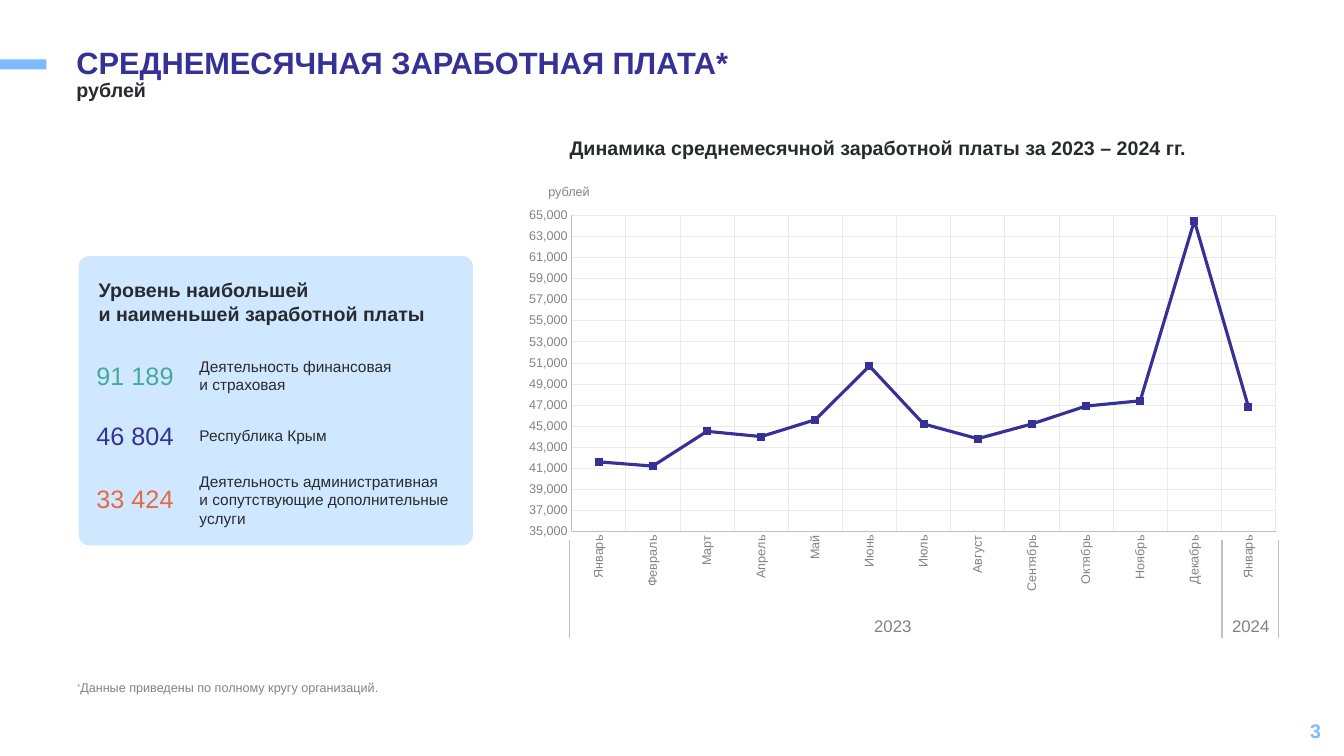
from dataclasses import dataclass

from lxml import etree
from pptx import Presentation
from pptx.chart.axis import CategoryAxis, ValueAxis
from pptx.chart.data import CategoryChartData
from pptx.dml.color import RGBColor
from pptx.enum.chart import XL_CHART_TYPE, XL_TICK_MARK
from pptx.enum.shapes import MSO_CONNECTOR, MSO_SHAPE
from pptx.enum.text import MSO_ANCHOR, PP_ALIGN
from pptx.oxml import parse_xml
from pptx.oxml.ns import nsdecls, qn
from pptx.slide import Slide
from pptx.util import Inches, Pt

LINE_CHART = XL_CHART_TYPE.LINE
NO_TICK = XL_TICK_MARK.NONE
STRAIGHT = MSO_CONNECTOR.STRAIGHT
RECTANGLE, ROUNDED = MSO_SHAPE.RECTANGLE, MSO_SHAPE.ROUNDED_RECTANGLE
TOP, MIDDLE = MSO_ANCHOR.TOP, MSO_ANCHOR.MIDDLE
LEFT, CENTER, RIGHT = PP_ALIGN.LEFT, PP_ALIGN.CENTER, PP_ALIGN.RIGHT

FONT = "Arial"
COLORS = {
    "accent": "7DBBFC", "indigo": "363194", "dark": "282A2E", "gray": "838383",
    "panel": "CFE8FF", "green": "46AA98", "orange": "E36846",
    "axis": "BFBFBF", "grid": "EBEBEB",
}
MONTHS = ["Январь", "Февраль", "Март", "Апрель", "Май", "Июнь", "Июль", "Август",
          "Сентябрь", "Октябрь", "Ноябрь", "Декабрь", "Январь"]
WAGES = [41600, 41200, 44500, 44000, 45600, 50700, 45200, 43800,
         45200, 46900, 47400, 64500, 46800]
PLOT_AREA = {"x": 0.091, "y": 0.044, "w": 0.884, "h": 0.774}


@dataclass
class Label:
    left: float
    top: float
    width: float
    height: float
    lines: list[str]
    size: float
    color: str
    bold: bool = False
    align: PP_ALIGN = LEFT
    anchor: MSO_ANCHOR = TOP
    line_spacing: float = 1.0
    wrap: bool = True
    margin: float | None = None
    superscript: str = ""


@dataclass
class WageLevel:
    amount: str
    color: str
    amount_top: float
    activity: list[str]
    activity_top: float
    activity_width: float


LABELS = [
    Label(10.2, 7.05, 3, 0.4, ["3"], 14, "accent", True, RIGHT, MIDDLE),
    Label(0.66, 0.43, 10.41, 0.57, ["СРЕДНЕМЕСЯЧНАЯ ЗАРАБОТНАЯ ПЛАТА*"], 22, "indigo",
          True, line_spacing=0.9),
    Label(0.66, 0.75, 10.41, 0.44, ["рублей"], 14, "dark", True, line_spacing=0.9),
    Label(5.55, 1.3, 6.82, 0.37,
          ["Динамика среднемесячной заработной платы за 2023 – 2024 гг."], 14, "dark", True),
    Label(5.34, 1.77, 1.04, 0.25, ["рублей"], 9, "gray"),
    Label(0.67, 6.7, 3.86, 0.33, ["Данные приведены по полному кругу организаций."], 9, "gray",
          superscript="*"),
    Label(7.63, 6.1, 2.45, 0.22, ["2023"], 12, "gray", align=CENTER, margin=0.01),
    Label(11.93, 6.1, 0.95, 0.22, ["2024"], 12, "gray", align=CENTER, margin=0.01),
    Label(0.88, 2.71, 3.64, 0.57, ["Уровень наибольшей", "и наименьшей заработной платы"],
          14, "dark", True),
]
WAGE_LEVELS = [
    WageLevel("91 189", "green", 3.53, ["Деятельность финансовая", "и страховая"], 3.49, 2.39),
    WageLevel("46 804", "indigo", 4.12, ["Республика Крым"], 4.18, 2.39),
    WageLevel("33 424", "orange", 4.75,
              ["Деятельность административная", "и сопутствующие дополнительные услуги"],
              4.63, 2.95),
]


def color(name: str) -> RGBColor:
    return RGBColor.from_string(COLORS[name])


def add_label(page: Slide, label: Label) -> None:
    box = page.shapes.add_textbox(*map(Inches, (label.left, label.top, label.width, label.height)))
    frame = box.text_frame
    frame.word_wrap = label.wrap
    frame.vertical_anchor = label.anchor
    if label.margin is not None:
        for side in ("left", "top", "right", "bottom"):
            setattr(frame, f"margin_{side}", Inches(label.margin))
    font_format = {"name": FONT, "size": Pt(label.size), "bold": label.bold}
    for index, line in enumerate(label.lines):
        para = frame.add_paragraph() if index else frame.paragraphs[0]
        para.alignment = label.align
        para.line_spacing = label.line_spacing
        if label.superscript:
            mark = para.add_run()
            mark.text = label.superscript
            mark.font._element.set("baseline", "30000")
        para.add_run().text = line
        for span in para.runs:
            for attribute, value in font_format.items():
                setattr(span.font, attribute, value)
            span.font.color.rgb = color(label.color)


def add_block(page: Slide, kind: MSO_SHAPE, place: tuple[float, ...], fill: str,
              corner: float | None = None) -> None:
    block = page.shapes.add_shape(kind, *map(Inches, place))
    block.shadow.inherit = False
    block.fill.solid()
    block.fill.fore_color.rgb = color(fill)
    block.line.fill.background()
    if corner is not None:
        block.adjustments[0] = corner


def add_year_divider(page: Slide, x: float) -> None:
    divider = page.shapes.add_connector(STRAIGHT, Inches(x), Inches(5.36), Inches(x), Inches(6.33))
    divider.line.color.rgb = color("axis")
    divider.line.width = Pt(1)
    etree.SubElement(divider._element.spPr, qn("a:effectLst"))


def style_axis(axis: CategoryAxis | ValueAxis) -> None:
    axis.major_tick_mark = axis.minor_tick_mark = NO_TICK
    axis.has_major_gridlines = True
    for line, name, width in ((axis.format.line, "axis", 1),
                              (axis.major_gridlines.format.line, "grid", 0.5)):
        line.color.rgb = color(name)
        line.width = Pt(width)
    font = axis.tick_labels.font
    font.name, font.size = FONT, Pt(9)
    font.color.rgb = color("gray")


def add_wage_chart(page: Slide) -> None:
    wages = CategoryChartData(number_format="#,##0")
    wages.categories = MONTHS
    wages.add_series("Зарплата", WAGES)
    place = map(Inches, (4.95, 1.96, 7.9, 4.05))
    chart = page.shapes.add_chart(LINE_CHART, *place, wages).chart
    chart.has_legend = chart.has_title = False
    chart.font.name, chart.font.size = FONT, Pt(9)
    chart.font.color.rgb = color("dark")

    months, values = chart.category_axis, chart.value_axis
    style_axis(months)
    style_axis(values)
    months.tick_labels.font._element.getroottree()
    months._element.find(qn("c:txPr")).find(qn("a:bodyPr")).set("rot", "-5400000")
    limits = {"minimum_scale": 35000, "maximum_scale": 65000, "major_unit": 2000}
    for attribute, value in limits.items():
        setattr(values, attribute, value)
    values.tick_labels.number_format = "#,##0"
    values.tick_labels.number_format_is_linked = False

    plot = chart.plots[0]
    plot.vary_by_categories = False
    series = plot.series[0]
    series.smooth = False
    series.marker.style = None
    series.format.line.color.rgb = color("indigo")
    series.format.line.width = Pt(2.25)

    modes = '<c:layoutTarget val="inner"/><c:xMode val="edge"/><c:yMode val="edge"/>'
    sizes = "".join(f'<c:{key} val="{value}"/>' for key, value in PLOT_AREA.items())
    layout = parse_xml(f'<c:layout {nsdecls("c")}><c:manualLayout>{modes}{sizes}'
                       "</c:manualLayout></c:layout>")
    plot_area = chart._chartSpace.chart.plotArea
    for automatic in plot_area.findall(qn("c:layout")):
        plot_area.remove(automatic)
    plot_area.insert(0, layout)


def main() -> None:
    deck = Presentation()
    deck.slide_width, deck.slide_height = Inches(13.33), Inches(7.5)
    page = deck.slides.add_slide(deck.slide_layouts[6])
    add_block(page, RECTANGLE, (0, 0.59, 0.46, 0.1), "accent")
    add_wage_chart(page)
    for x in (5.65, 12.12, 12.68):
        add_year_divider(page, x)
    add_block(page, ROUNDED, (0.78, 2.54, 3.91, 2.87), "panel", 0.036)
    for label in LABELS:
        add_label(page, label)
    for level in WAGE_LEVELS:
        add_label(page, Label(0.85, level.amount_top, 0.97, 0.4, [level.amount], 18, level.color,
                              align=RIGHT, wrap=False))
        add_label(page, Label(1.88, level.activity_top, level.activity_width,
                              0.1 + 0.19 * len(level.activity), level.activity, 11, "dark"))
    deck.save("out.pptx")


if __name__ == "__main__":
    main()
